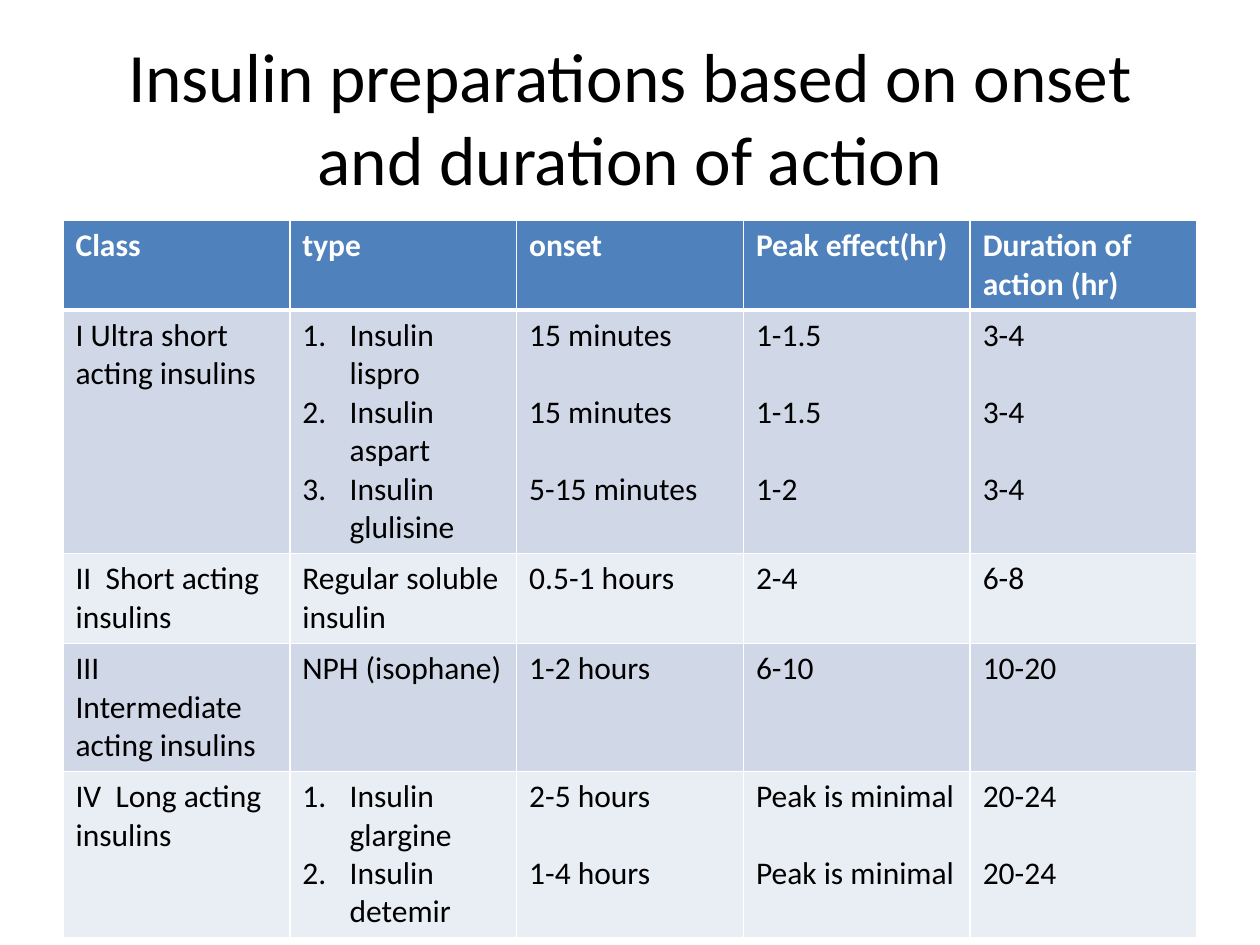
import pptx
import pptx.util
import pptx.dml.color
import pptx.enum.text
import pptx.oxml
import pptx.oxml.ns
from lxml import etree

Pt = pptx.util.Pt
RGB = pptx.dml.color.RGBColor
BLACK = RGB(0, 0, 0)
WHITE = RGB(255, 255, 255)
BLUE = RGB(0x4F, 0x81, 0xBD)
BANDS = RGB(0xD0, 0xD8, 0xE8), RGB(0xE9, 0xED, 0xF4)
FONT = "Calibri"
SIZE = 18
LINE = 22
PAD = 3.6
INDENT = 27

TITLE = "Insulin preparations based on onset and duration of action"
HEAD = ["Class", "type", "onset", "Peak effect(hr)", "Duration of action (hr)"]
# A list in the type column is numbered; lists beside it match its items.
ROWS = [
    ["I Ultra short acting insulins",
     ["Insulin lispro", "Insulin aspart", "Insulin glulisine"],
     ["15 minutes", "15 minutes", "5-15 minutes"],
     ["1-1.5", "1-1.5", "1-2"],
     ["3-4", "3-4", "3-4"]],
    ["II  Short acting insulins", "Regular soluble insulin",
     "0.5-1 hours", "2-4", "6-8"],
    ["III  Intermediate acting insulins", "NPH (isophane)",
     "1-2 hours", "6-10", "10-20"],
    ["IV  Long acting insulins",
     ["Insulin glargine", "Insulin detemir"],
     ["2-5 hours", "1-4 hours"],
     ["Peak is minimal", "Peak is minimal"],
     ["20-24", "20-24"]],
]
LINES = [2, 6, 2, 3, 4]
LEFT, TOP, WIDTH = 36, 126, 648


def style(para, size, color, bold=False):
    font = para.font
    font.name, font.size, font.bold = FONT, Pt(size), bold
    font.color.rgb = color


def number(para):
    """Give a paragraph an automatic number and a hanging indent."""
    props = para._p.get_or_add_pPr()
    props.set("marL", str(Pt(INDENT)))
    props.set("indent", str(-Pt(INDENT)))
    mark = etree.SubElement(props, pptx.oxml.ns.qn("a:buAutoNum"))
    mark.set("type", "arabicPeriod")


def border(cell, row):
    props = cell._tc.get_or_add_tcPr()
    widths = {"L": 1, "R": 1, "T": 3 if row == 1 else 1, "B": 3 if row == 0 else 1}
    for side, width in widths.items():
        props.append(pptx.oxml.parse_xml(
            f'<a:ln{side} {pptx.oxml.ns.nsdecls("a")} w="{Pt(width)}">'
            f'<a:solidFill><a:srgbClr val="{WHITE}"/></a:solidFill></a:ln{side}>'))


def fill(cell, row, col, text):
    border(cell, row)
    cell.fill.solid()
    cell.fill.fore_color.rgb = BANDS[(row - 1) % 2] if row else BLUE
    cell.margin_top = cell.margin_bottom = Pt(PAD)
    items = text if isinstance(text, list) else [text]
    frame = cell.text_frame
    frame.text = "\n".join(items)
    for i, para in enumerate(frame.paragraphs):
        if len(items) > 1 and col == 1:
            number(para)
        elif i:
            para.space_before = Pt(LINE)
        style(para, SIZE, BLACK if row else WHITE, row == 0)


def main():
    deck = pptx.Presentation()
    deck.slide_width, deck.slide_height = Pt(720), Pt(540)
    slide = deck.slides.add_slide(deck.slide_layouts[5])

    title = slide.shapes.title
    title.left, title.top, title.width, title.height = map(Pt, (36, 21.6, 648, 90))
    title.text = TITLE
    frame = title.text_frame
    frame.auto_size = pptx.enum.text.MSO_AUTO_SIZE.NONE
    frame.vertical_anchor = pptx.enum.text.MSO_ANCHOR.MIDDLE
    para = frame.paragraphs[0]
    para.alignment = pptx.enum.text.PP_ALIGN.CENTER
    style(para, 39.6, BLACK)

    highs = [n * LINE + 2 * PAD for n in LINES]
    table = slide.shapes.add_table(
        len(LINES), len(HEAD), Pt(LEFT), Pt(TOP), Pt(WIDTH), Pt(sum(highs))).table
    for line, high in zip(table.rows, highs):
        line.height = Pt(high)
    for row, texts in enumerate([HEAD] + ROWS):
        for col, text in enumerate(texts):
            fill(table.cell(row, col), row, col, text)

    deck.save("out.pptx")


if __name__ == "__main__":
    main()
